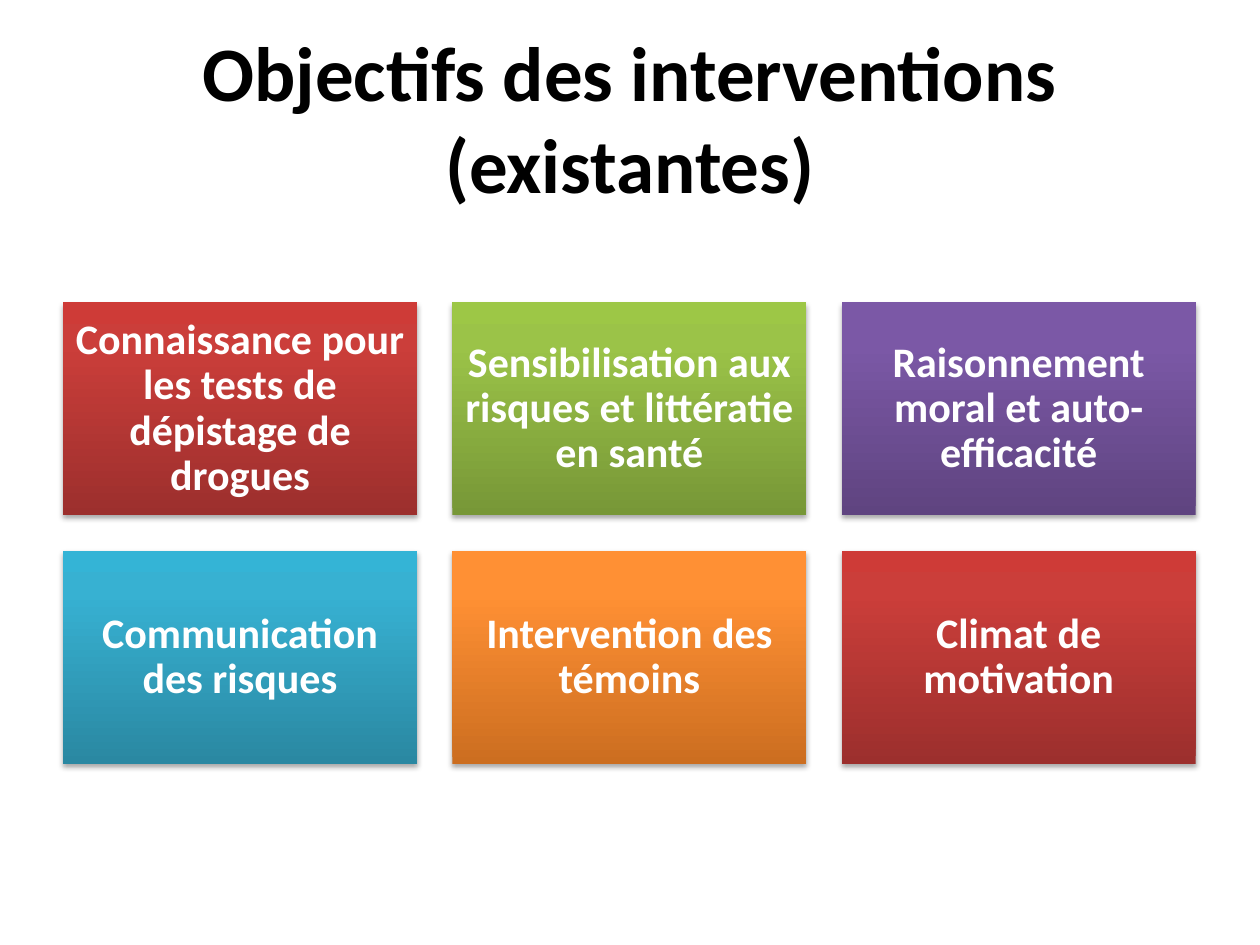
from dataclasses import dataclass

from pptx import Presentation
from pptx.dml.color import RGBColor
from pptx.enum.shapes import MSO_SHAPE
from pptx.enum.text import MSO_ANCHOR, PP_ALIGN
from pptx.oxml import parse_xml
from pptx.oxml.ns import nsdecls, qn
from pptx.shapes.autoshape import Shape
from pptx.slide import Slide
from pptx.util import Inches, Pt


@dataclass(frozen=True)
class Gradient:
    bottom: str
    middle: str
    top: str


@dataclass(frozen=True)
class Theme:
    font: str = "Calibri"
    title_size: int = 44
    tile_size: int = 24
    title_color: str = "000000"
    tile_color: str = "FFFFFF"
    shadow_color: str = "000000"
    red: Gradient = Gradient("9C2F2D", "CB3E3A", "CE3B37")
    green: Gradient = Gradient("779737", "9BC348", "9DC746")
    purple: Gradient = Gradient("5F4480", "7B58A6", "7C57A8")
    blue: Gradient = Gradient("2A88A2", "37B1D2", "34B4D6")
    orange: Gradient = Gradient("CC6E20", "FF9034", "FF9136")


@dataclass(frozen=True)
class Tile:
    text: str
    gradient: Gradient


THEME = Theme()
TILES = [
    Tile("Connaissance pour les tests de dépistage de drogues", THEME.red),
    Tile("Sensibilisation aux risques et littératie en santé", THEME.green),
    Tile("Raisonnement moral et auto-efficacité", THEME.purple),
    Tile("Communication des risques", THEME.blue),
    Tile("Intervention des témoins", THEME.orange),
    Tile("Climat de motivation", THEME.red),
]
COLUMNS = 3
GRID_LEFT, GRID_TOP = 0.5, 2.4
TILE_WIDTH, TILE_HEIGHT = 2.81, 1.69
GAP = 0.28


def write_text(shape: Shape, text: str, *, size: int, color: str,
               line_spacing: float = 1.0, vertical_margin: float = 0.05) -> None:
    frame = shape.text_frame
    frame.word_wrap = True
    frame.vertical_anchor = MSO_ANCHOR.MIDDLE
    frame.margin_left = frame.margin_right = Inches(0.1)
    frame.margin_top = frame.margin_bottom = Inches(vertical_margin)
    paragraph = frame.paragraphs[0]
    paragraph.alignment = PP_ALIGN.CENTER
    paragraph.line_spacing = line_spacing
    run = paragraph.add_run()
    run.text = text
    run.font.name = THEME.font
    run.font.size = Pt(size)
    run.font.bold = True
    run.font.color.rgb = RGBColor.from_string(color)


def fill_gradient(shape: Shape, gradient: Gradient) -> None:
    shape.fill.gradient()
    shape.fill.gradient_angle = 90
    stops = ((0, gradient.bottom), (80, gradient.middle), (100, gradient.top))
    stop_xml = "".join(
        f'<a:gs pos="{position * 1000}"><a:srgbClr val="{color}"/></a:gs>'
        for position, color in stops
    )
    gradient_fill = shape._element.spPr.find(qn("a:gradFill"))
    gradient_fill.replace(
        gradient_fill.find(qn("a:gsLst")),
        parse_xml(f'<a:gsLst {nsdecls("a")}>{stop_xml}</a:gsLst>'),
    )


def add_shadow(shape: Shape) -> None:
    shape.shadow.inherit = False
    shape._element.spPr.find(qn("a:effectLst")).append(parse_xml(
        f'<a:outerShdw {nsdecls("a")} blurRad="{Pt(3.1)}" dist="{Pt(1.8)}" '
        f'dir="5400000" rotWithShape="0"><a:srgbClr val="{THEME.shadow_color}">'
        '<a:alpha val="35000"/></a:srgbClr></a:outerShdw>'
    ))


def draw_title(slide: Slide, text: str) -> None:
    box = slide.shapes.add_textbox(Inches(0.5), Inches(0.3), Inches(9), Inches(1.25))
    write_text(box, text, size=THEME.title_size, color=THEME.title_color)


def draw_tile(slide: Slide, tile: Tile, index: int) -> None:
    row, column = divmod(index, COLUMNS)
    shape = slide.shapes.add_shape(
        MSO_SHAPE.RECTANGLE,
        Inches(GRID_LEFT + column * (TILE_WIDTH + GAP)),
        Inches(GRID_TOP + row * (TILE_HEIGHT + GAP)),
        Inches(TILE_WIDTH),
        Inches(TILE_HEIGHT),
    )
    fill_gradient(shape, tile.gradient)
    shape.line.fill.background()
    add_shadow(shape)
    write_text(shape, tile.text, size=THEME.tile_size, color=THEME.tile_color,
               line_spacing=0.9, vertical_margin=0.1)


def main() -> None:
    presentation = Presentation()
    presentation.slide_width = Inches(10)
    presentation.slide_height = Inches(7.5)
    slide = presentation.slides.add_slide(presentation.slide_layouts[6])
    draw_title(slide, "Objectifs des interventions (existantes)")
    for index, tile in enumerate(TILES):
        draw_tile(slide, tile, index)
    presentation.save("out.pptx")


if __name__ == "__main__":
    main()
